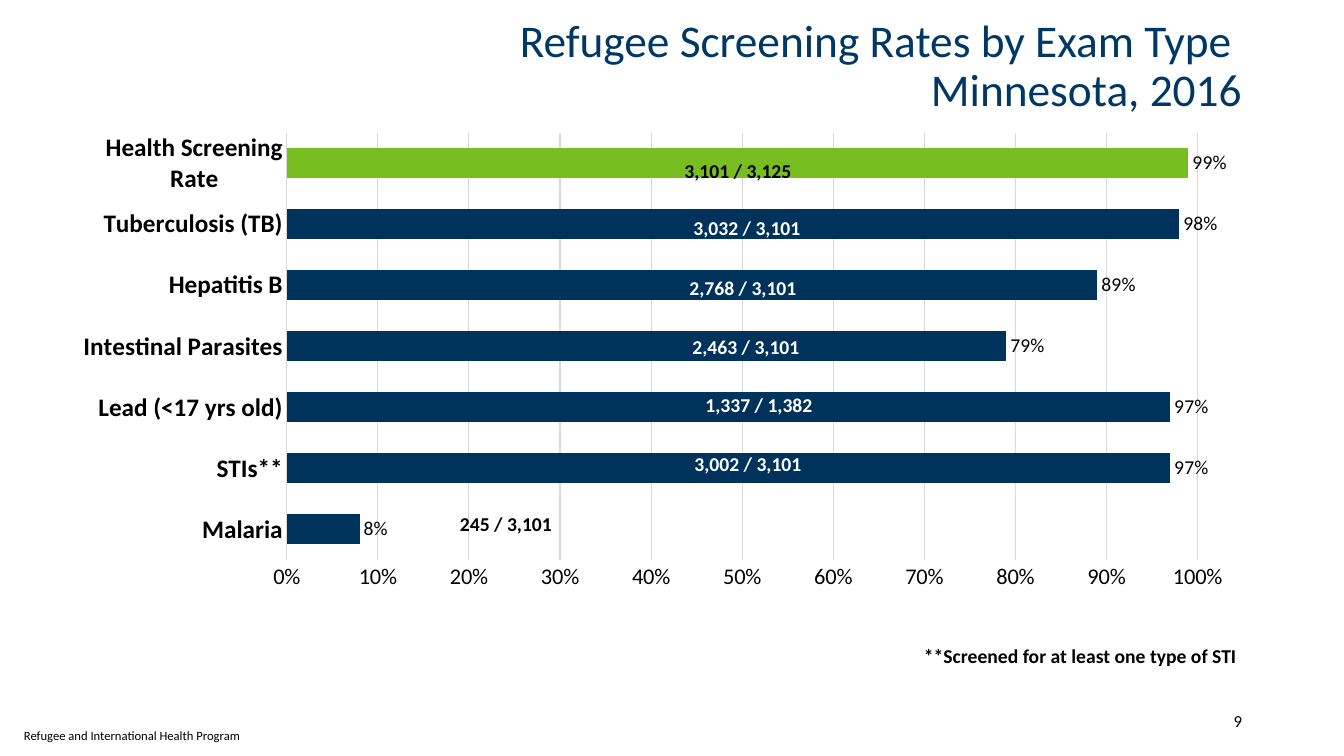
from dataclasses import dataclass

from lxml.etree import SubElement
from pptx import Presentation
from pptx.chart.data import CategoryChartData
from pptx.dml.color import RGBColor
from pptx.enum.chart import XL_CHART_TYPE, XL_LABEL_POSITION, XL_TICK_MARK
from pptx.enum.text import MSO_ANCHOR, MSO_AUTO_SIZE, PP_ALIGN
from pptx.oxml.ns import qn
from pptx.util import Emu, Pt


@dataclass(frozen=True)
class Theme:
    """Colours, font and type sizes of the slide."""
    font: str = "Calibri"
    title: str = "003865"
    bar: str = "00335C"
    highlight: str = "78BE21"
    grid: str = "D9D9D9"
    dark: str = "000000"
    light: str = "FFFFFF"
    title_size: float = 32.4
    category_size: int = 18
    axis_size: int = 16
    label_size: int = 14
    number_size: int = 12
    footer_size: int = 9


SCREENINGS = [
    ("Malaria", 0.08, "245 / 3,101", 506, 507),
    ("STIs**", 0.97, "3,002 / 3,101", 748, 447),
    ("Lead (<17 yrs old)", 0.97, "1,337 / 1,382", 759, 388),
    ("Intestinal Parasites", 0.79, "2,463 / 3,101", 746, 330),
    ("Hepatitis B", 0.89, "2,768 / 3,101", 743, 271),
    ("Tuberculosis (TB)", 0.98, "3,032 / 3,101", 747, 211),
    ("Health Screening Rate", 0.99, "3,101 / 3,125", 738, 154),
]
DARK_COUNTS = ("Malaria", "Health Screening Rate")
COUNT_WIDTH = 134


def px(length):
    """Turn whole px into EMU."""
    return Emu(round(length * 914400 / 100.8))


class SlideBuilder:
    """Adds styled elements to one slide."""

    def __init__(self, presentation, theme):
        """Start a title-only slide."""
        self.theme = theme
        self.slide = presentation.slides.add_slide(presentation.slide_layouts[5])

    def style(self, font, size, color, bold=False):
        """Apply the theme font with a size and colour."""
        font.name = self.theme.font
        font.size = Pt(size)
        font.bold = bold
        font.color.rgb = RGBColor.from_string(color)

    def title(self, lines, left, top, width, height):
        """Place and fill the title placeholder."""
        shape = self.slide.shapes.title
        shape.left, shape.top = px(left), px(top)
        shape.width, shape.height = px(width), px(height)
        frame = shape.text_frame
        frame.auto_size = MSO_AUTO_SIZE.NONE
        frame.vertical_anchor = MSO_ANCHOR.MIDDLE
        paragraph = frame.paragraphs[0]
        paragraph.alignment = PP_ALIGN.RIGHT
        paragraph.line_spacing = 0.9
        for index, line in enumerate(lines):
            if index:
                paragraph.add_line_break()
            run = paragraph.add_run()
            run.text = line
            self.style(run.font, self.theme.title_size, self.theme.title)

    def text(self, content, left, top, width, height, size, color,
             bold=False, align=PP_ALIGN.LEFT, anchor=MSO_ANCHOR.TOP):
        """Add a one-line text box."""
        box = self.slide.shapes.add_textbox(px(left), px(top), px(width), px(height))
        frame = box.text_frame
        frame.word_wrap = True
        frame.vertical_anchor = anchor
        paragraph = frame.paragraphs[0]
        paragraph.alignment = align
        run = paragraph.add_run()
        run.text = content
        self.style(run.font, size, color, bold)

    def line(self, line_format):
        """Give a chart line the grid colour."""
        line_format.color.rgb = RGBColor.from_string(self.theme.grid)
        line_format.width = Pt(0.75)

    def bar_chart(self, rows, highlighted, left, top, width, height):
        """Add the bar chart of screening rates."""
        theme = self.theme
        data = CategoryChartData(number_format="0%")
        data.categories = [row[0] for row in rows]
        data.add_series("Series 1", [row[1] for row in rows])
        chart = self.slide.shapes.add_chart(
            XL_CHART_TYPE.BAR_CLUSTERED, px(left), px(top), px(width), px(height), data).chart
        chart.has_legend = False
        chart.has_title = False
        self.style(chart.font, 10, theme.title)

        categories = chart.category_axis
        categories.major_tick_mark = XL_TICK_MARK.NONE
        self.style(categories.tick_labels.font, theme.category_size, theme.dark, True)
        self.line(categories.format.line)

        values = chart.value_axis
        values.minimum_scale, values.maximum_scale, values.major_unit = 0, 1, 0.1
        values.major_tick_mark = XL_TICK_MARK.NONE
        values.format.line.fill.background()
        values.tick_labels.number_format = "0%"
        values.tick_labels.number_format_is_linked = False
        self.style(values.tick_labels.font, theme.axis_size, theme.dark)
        self.line(values.major_gridlines.format.line)

        plot = chart.plots[0]
        plot.gap_width = 100
        plot.vary_by_categories = False
        series = plot.series[0]
        for bar, color in ((series, theme.bar), (series.points[highlighted], theme.highlight)):
            bar.format.fill.solid()
            bar.format.fill.fore_color.rgb = RGBColor.from_string(color)
        labels = series.data_labels
        labels.show_value = True
        labels.position = XL_LABEL_POSITION.OUTSIDE_END
        labels.number_format = "0%"
        labels.number_format_is_linked = False
        self.style(labels.font, theme.label_size, theme.dark)
        self.plot_layout(chart, 0.19, 0.02, 0.77, 0.89)

    def plot_layout(self, chart, left, top, width, height):
        """Fix the inner plot area as shares of the chart."""
        area = chart.element.find(".//" + qn("c:plotArea"))
        layout = area.find(qn("c:layout"))
        if layout is None:
            layout = area.makeelement(qn("c:layout"))
            area.insert(0, layout)
        manual = SubElement(layout, qn("c:manualLayout"))
        settings = [("layoutTarget", "inner"), ("xMode", "edge"), ("yMode", "edge"),
                    ("x", left), ("y", top), ("w", width), ("h", height)]
        for name, value in settings:
            SubElement(manual, qn("c:" + name)).set("val", str(value))


def main():
    """Build and save the slide."""
    theme = Theme()
    presentation = Presentation()
    presentation.slide_width, presentation.slide_height = px(1344), px(756)
    builder = SlideBuilder(presentation, theme)
    builder.title(["Refugee Screening Rates by Exam Type ", "Minnesota, 2016"], 93, 17, 1159, 101)
    builder.bar_chart(SCREENINGS, len(SCREENINGS) - 1, 62, 123, 1183, 480)
    for name, _, count, center, top in SCREENINGS:
        color = theme.dark if name in DARK_COUNTS else theme.light
        builder.text(count, center - COUNT_WIDTH // 2, top, COUNT_WIDTH, 34,
                     theme.label_size, color, True, PP_ALIGN.CENTER)
    builder.text("**Screened for at least one type of STI", 914, 639, 337, 34,
                 theme.label_size, theme.dark, True)
    builder.text("9", 1091, 701, 161, 40, theme.number_size, theme.dark,
                 align=PP_ALIGN.RIGHT, anchor=MSO_ANCHOR.MIDDLE)
    builder.text("Refugee and International Health Program", 14, 723, 238, 25,
                 theme.footer_size, theme.dark)
    presentation.save("out.pptx")


if __name__ == "__main__":
    main()
